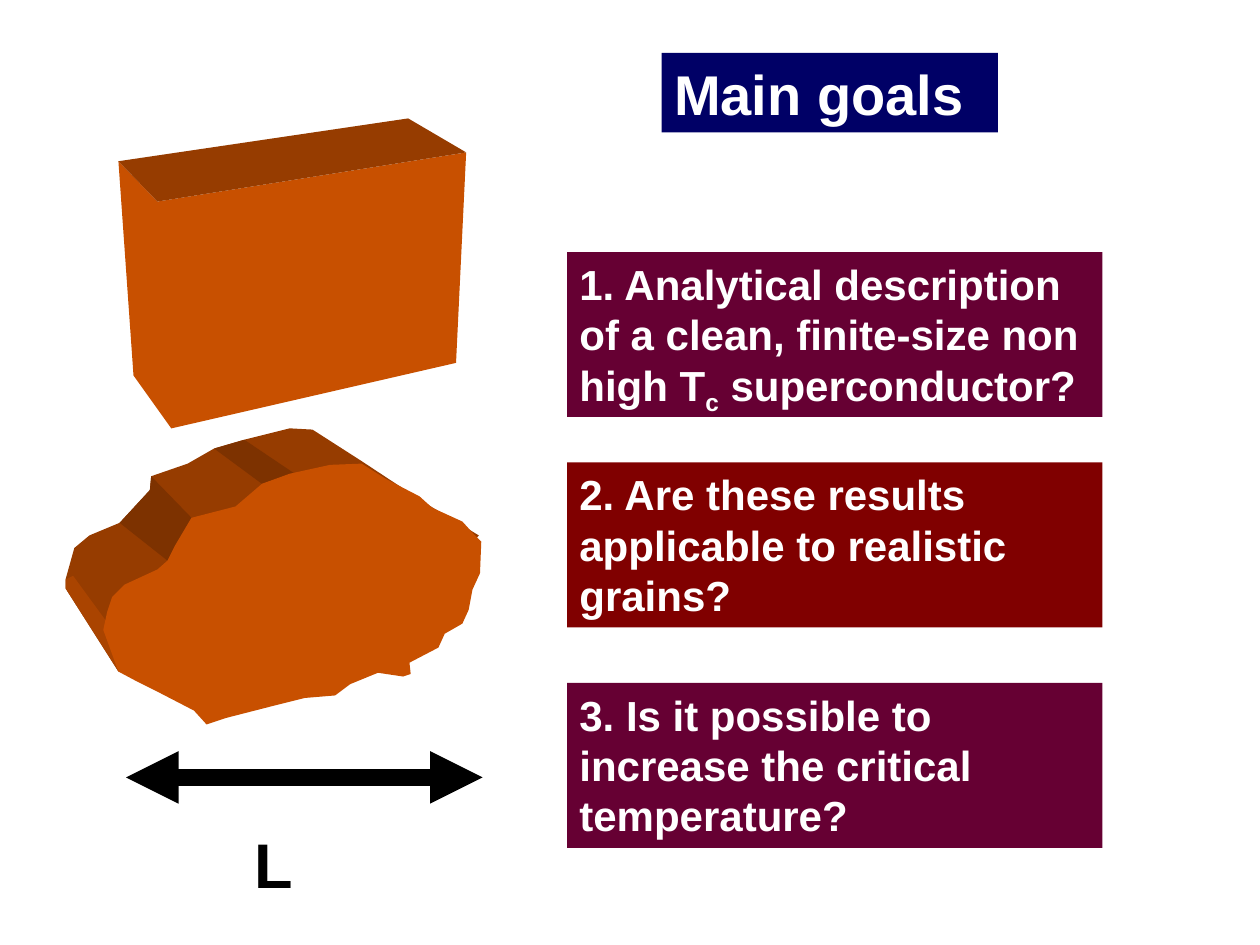
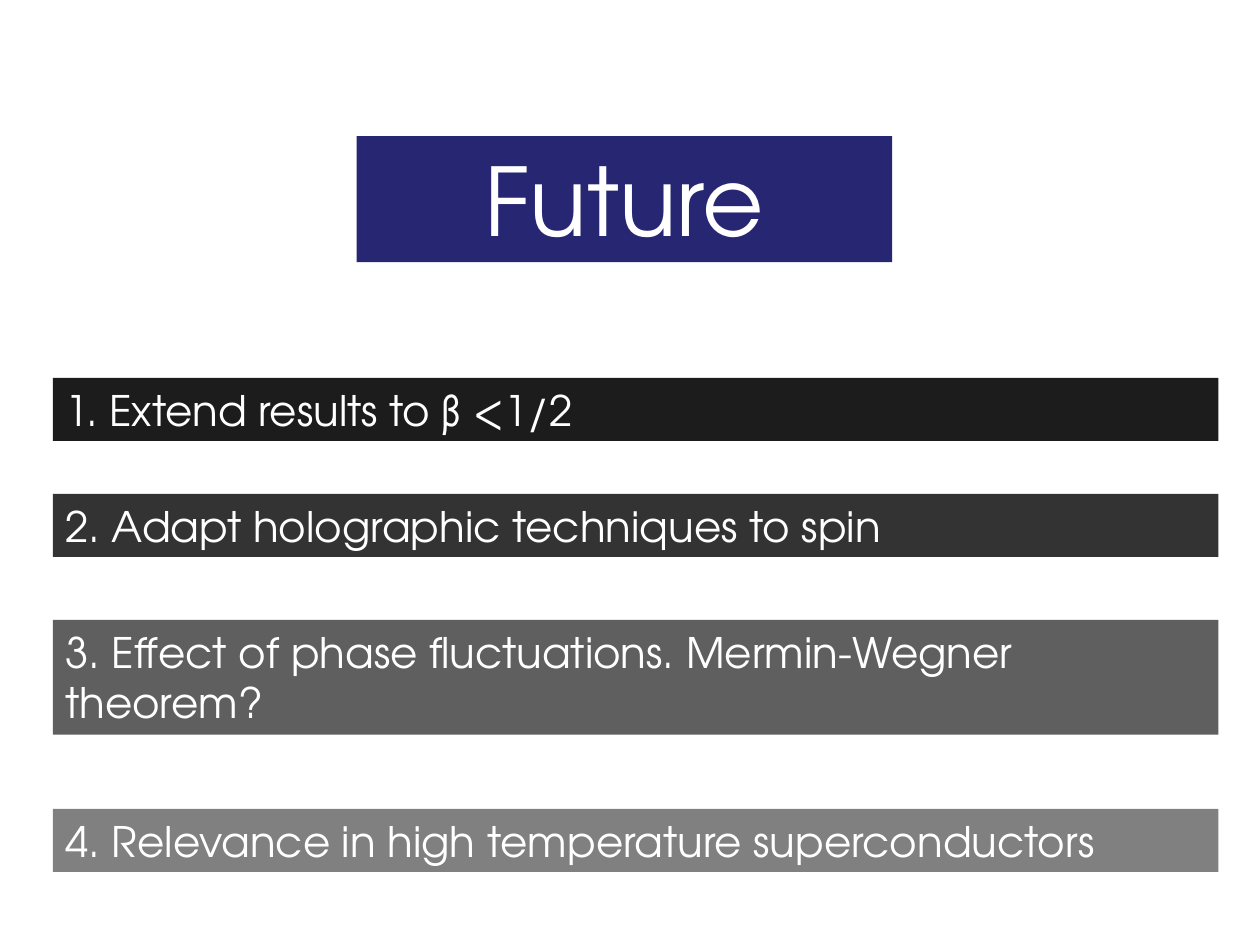
from lxml import etree
from pptx import Presentation
from pptx.dml.color import RGBColor
from pptx.enum.shapes import MSO_CONNECTOR, MSO_SHAPE
from pptx.enum.text import MSO_ANCHOR, MSO_AUTO_SIZE, PP_ALIGN
from pptx.oxml.ns import qn
from pptx.util import Inches, Pt

RECT = MSO_SHAPE.RECTANGLE
LINE = MSO_CONNECTOR.STRAIGHT
TOP = MSO_ANCHOR.TOP
FIXED = MSO_AUTO_SIZE.NONE
LEFT, CENTER = PP_ALIGN.LEFT, PP_ALIGN.CENTER
SANS, ROUND = "Arial", "TeX Gyre Adventor"
WHITE, BLACK = "FFFFFF", "000000"
PLUM, MAROON, NAVY, INDIGO = "660033", "800000", "000066", "262673"
FRONT, SIDE, FOLD, SHADE = "C85000", "963C00", "7D3200", "AA4400"

GOALS = [
    (2, PLUM, ["1. Analytical description of a clean, finite-size non high T",
               "c", " superconductor?"]),
    (3.67, MAROON, ["2. Are these results applicable to realistic grains?"]),
    (5.42, PLUM, ["3. Is it possible to increase the critical temperature?"]),
]
PLANS = [
    (3, 0.5, "1C1C1C", "1. Extend results to β <1/2"),
    (3.92, 0.5, "333333", "2. Adapt holographic techniques to spin"),
    (4.92, 0.91, "5F5F5F",
     "3. Effect of phase fluctuations. Mermin-Wegner theorem?"),
    (6.42, 0.5, "808080", "4. Relevance in high temperature superconductors"),
]
BLOCK = [
    (FRONT, [(0, 34), (31, 66), (276, 27), (268, 194), (42, 246), (12, 204)]),
    (SIDE, [(0, 34), (230, 0), (276, 27), (31, 66)]),
]
GRAIN = [
    (SIDE, [(0, 121), (7, 96), (19, 86), (43, 76), (67, 50), (68, 39),
            (97, 29), (118, 17), (142, 10), (178, 1), (196, 2), (235, 27),
            (285, 60), (328, 86), (300, 120), (42, 194), (0, 128)]),
    (FOLD, [(43, 76), (67, 50), (68, 39), (100, 72), (87, 94), (81, 106)]),
    (FOLD, [(118, 17), (142, 10), (182, 37), (156, 45)]),
    (SHADE, [(0, 121), (6, 118), (33, 155), (42, 194), (0, 128)]),
    (FRONT, [(33, 147), (37, 135), (47, 125), (73, 113), (81, 106), (87, 94),
             (100, 72), (135, 63), (156, 45), (178, 37), (210, 30), (235, 29),
             (254, 41), (281, 55), (291, 64), (315, 75), (325, 86), (330, 91),
             (329, 116), (323, 129), (320, 145), (315, 156), (301, 164),
             (296, 175), (273, 187), (274, 196), (268, 198), (248, 195),
             (226, 204), (214, 213), (190, 215), (166, 221), (127, 231),
             (112, 236), (102, 225), (73, 210), (65, 206), (55, 201),
             (42, 194), (30, 161)]),
]


def tint(fill, code):
    fill.solid()
    fill.fore_color.rgb = RGBColor.from_string(code)


def write(shape, parts, size, font, bold=False, align=LEFT, color=WHITE):
    frame = shape.text_frame
    frame.word_wrap = True
    frame.auto_size = FIXED
    frame.vertical_anchor = TOP
    para = frame.paragraphs[0]
    para.alignment = align
    para.space_before = Pt(0)
    for part in parts:
        run = para.add_run()
        run.text = part
        run.font.size = Pt(size)
        run.font.name = font
        run.font.bold = bold
        run.font.color.rgb = RGBColor.from_string(color)
    return para


def place(shape, box):
    shape.left, shape.top, shape.width, shape.height = map(Inches, box)


def add_title(slide, box, code, text, size, font, bold, align):
    title = slide.shapes.title
    place(title, box)
    tint(title.fill, code)
    write(title, [text], size, font, bold, align)


def add_band(slide, box, code, parts, font, bold=False):
    band = slide.shapes.add_shape(RECT, *map(Inches, box))
    band.shadow.inherit = False
    tint(band.fill, code)
    band.line.fill.background()
    return write(band, parts, 24, font, bold)


def add_solid(slide, left, top, faces):
    for code, points in faces:
        path = slide.shapes.build_freeform(*points[0], scale=Inches(0.01))
        path.add_line_segments(points[1:], close=True)
        face = path.convert_to_shape(Inches(left), Inches(top))
        face.shadow.inherit = False
        tint(face.fill, code)
        face.line.fill.background()


def add_scale(slide, left, top, width):
    arrow = slide.shapes.add_connector(
        LINE, Inches(left), Inches(top), Inches(left + width), Inches(top))
    arrow.line.width = Pt(10)
    tint(arrow.line.fill, BLACK)
    line = arrow.line._get_or_add_ln()
    for end in ("a:headEnd", "a:tailEnd"):
        etree.SubElement(line, qn(end), type="triangle")
    etree.SubElement(arrow._element.spPr, qn("a:effectLst"))
    label = slide.shapes.add_textbox(
        Inches(left + 0.92), Inches(top + 0.33), Inches(0.67), Inches(0.7))
    write(label, ["L"], 36, SANS, True, color=BLACK)


def add_goals(slide, left, width):
    for top, code, parts in GOALS:
        para = add_band(slide, (left, top, width, 1.31), code, parts, SANS, True)
        for run in para.runs[1:2]:
            run.font._element.set("baseline", "-25000")


def goal_slide(slide):
    add_title(slide, (5.25, 0.42, 2.67, 0.63), NAVY, "Main goals",
              32, SANS, True, LEFT)
    add_solid(slide, 0.52, 3.39, GRAIN)
    add_scale(slide, 1, 6.17, 2.83)
    add_solid(slide, 0.94, 0.94, BLOCK)
    add_goals(slide, 4.5, 4.25)


def plan_slide(slide):
    add_title(slide, (2.83, 1.08, 4.25, 1), INDIGO, "Future",
              54, ROUND, False, CENTER)
    for top, height, code, text in PLANS:
        add_band(slide, (0.42, top, 9.25, height), code, [text], ROUND)


def main():
    deck = Presentation()
    deck.slide_width, deck.slide_height = Inches(10), Inches(7.5)
    layout = deck.slide_layouts.get_by_name("Title Only")
    for build in (goal_slide, plan_slide):
        build(deck.slides.add_slide(layout))
    deck.save("out.pptx")


if __name__ == "__main__":
    main()
